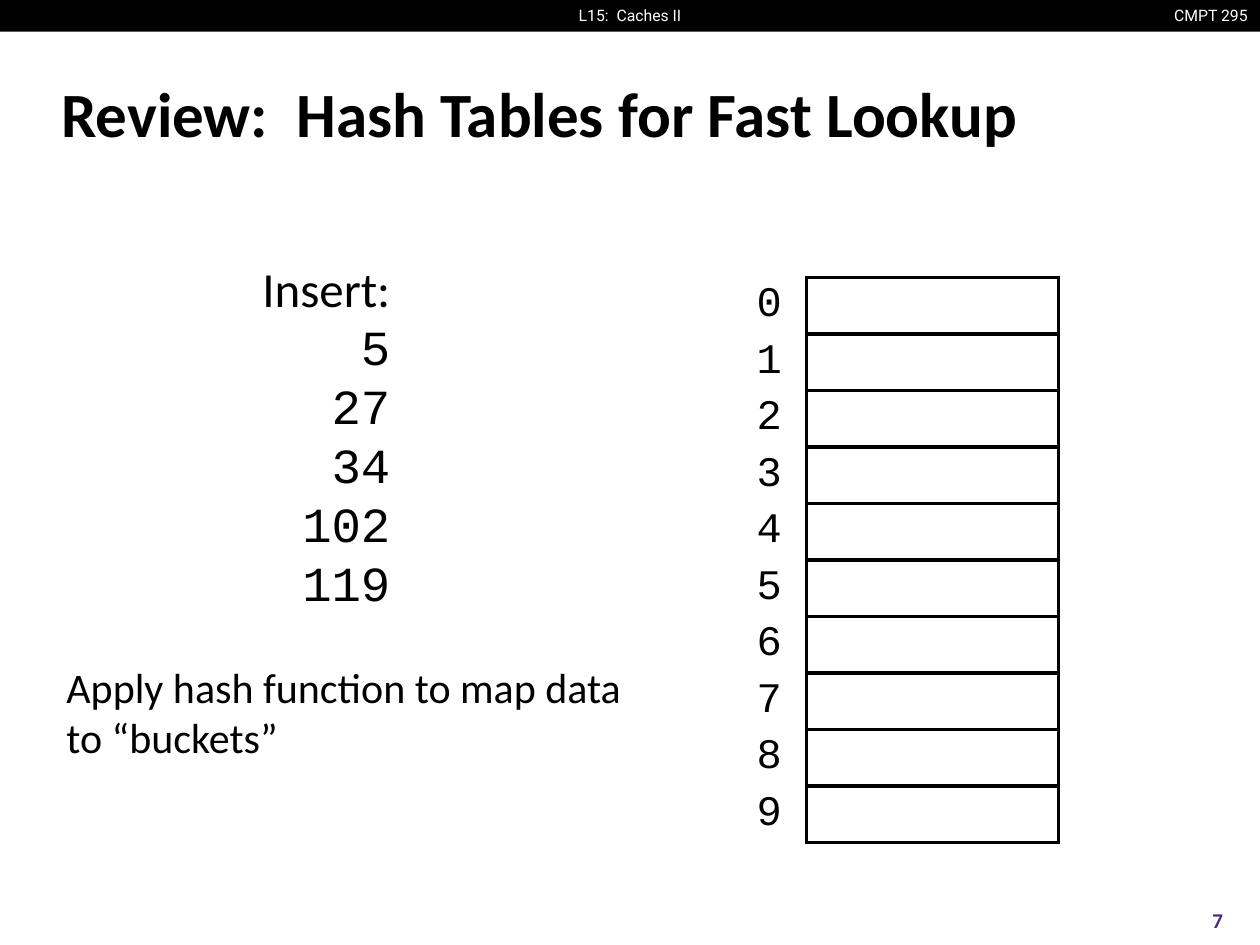
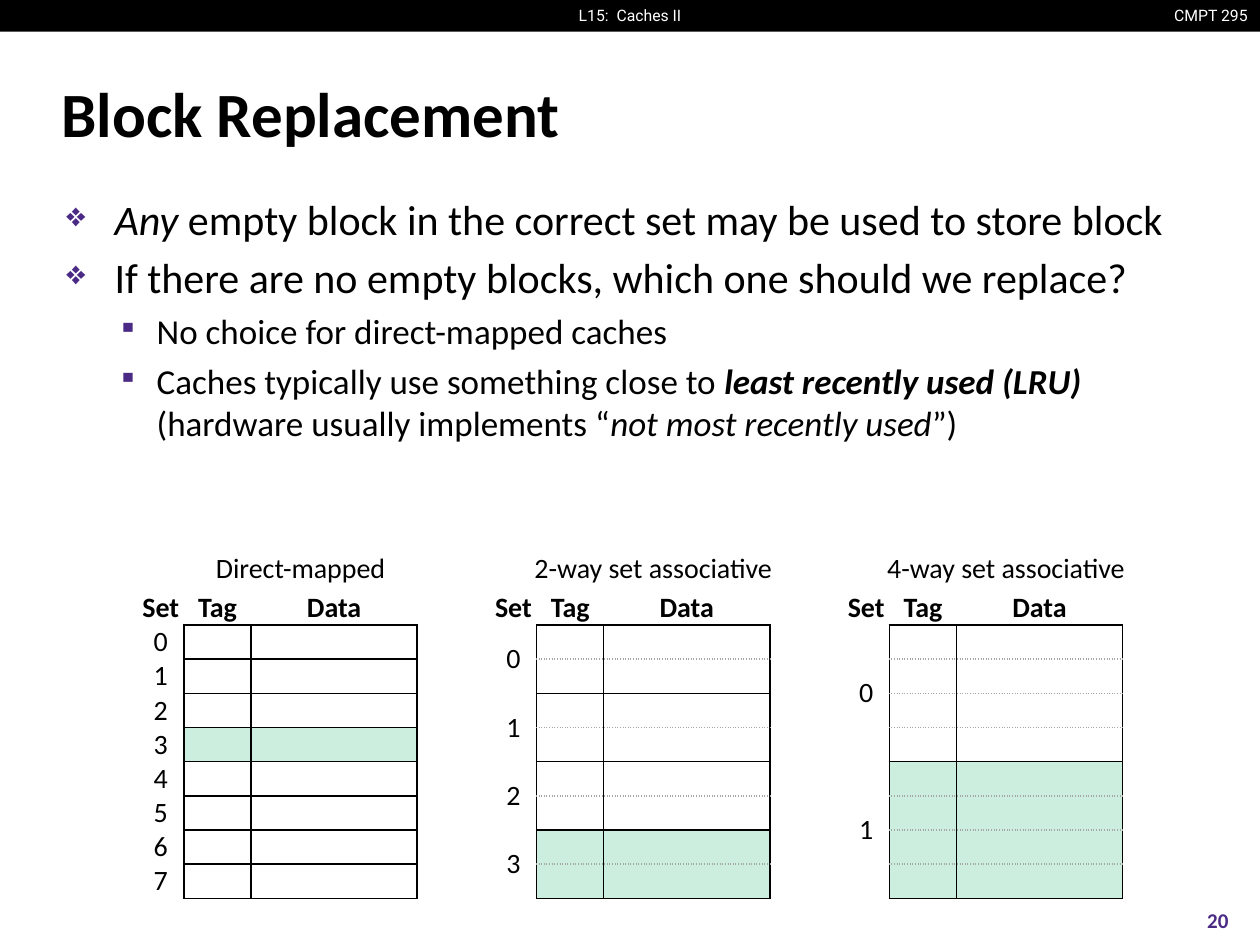
from dataclasses import dataclass

from lxml.etree import SubElement
from pptx import Presentation
from pptx.dml.color import RGBColor
from pptx.enum.shapes import MSO_SHAPE
from pptx.enum.text import MSO_ANCHOR, PP_ALIGN
from pptx.oxml.ns import qn
from pptx.slide import Slide
from pptx.table import Table, _Cell
from pptx.text.text import TextFrame, _Paragraph
from pptx.util import Cm, Pt

BLACK, WHITE, PURPLE, GREEN, GRAY = "000000", "FFFFFF", "4B2A85", "CCEEDF", "A6A6A6"
BODY_FONT, CODE_FONT, BAND_FONT = "Calibri", "Courier New", "Roboto"
SLIDE_WIDTH, SLIDE_HEIGHT, BAND_HEIGHT = 25.4, 19.05, 0.64
NO_STYLE_NO_GRID = "{2D5ABB26-0587-4C30-8999-92F81FD0307C}"

BLOCK_COUNT = 8
CACHE_LEFT, CACHE_TOP, CACHE_STEP, CACHE_ROW = 2.77, 11.91, 7.11, 0.69
CACHE_COLUMNS = (0.94, 1.35, 3.35)
CAPTION_OVERHANG = 0.8


@dataclass(frozen=True)
class Box:
    """Left, top, width and height in centimetres."""
    left: float
    top: float
    width: float
    height: float

    def lengths(self) -> tuple[Cm, Cm, Cm, Cm]:
        return Cm(self.left), Cm(self.top), Cm(self.width), Cm(self.height)


@dataclass(frozen=True)
class Style:
    size: float
    font: str = BODY_FONT
    color: str = BLACK
    bold: bool = False


@dataclass(frozen=True)
class Span:
    text: str
    bold: bool = False
    italic: bool = False


@dataclass(frozen=True)
class Level:
    bullet: str
    bullet_percent: int
    size: float
    margin: float
    hanging: float


@dataclass(frozen=True)
class Edge:
    color: str = BLACK
    width: float = 1
    dash: str = "solid"


@dataclass(frozen=True)
class Cache:
    caption: str
    ways: int
    highlighted_set: int


TOPIC = Level("❖", 80, 24, 0.97, 0.97)
DETAIL = Level("▪", 80, 20, 1.82, 0.79)
SOLID, DOTTED = Edge(), Edge(GRAY, 1, "sysDot")
BUCKET_EDGE = Edge(width=2.25)

REPLACEMENT_POINTS = (
    (TOPIC, (Span("Any", italic=True),
             Span(" empty block in the correct set may be used to store block"))),
    (TOPIC, (Span("If there are no empty blocks, which one should we replace?"),)),
    (DETAIL, (Span("No choice for direct-mapped caches"),)),
    (DETAIL, (Span("Caches typically use something close to "),
              Span("least recently used (LRU)\n", bold=True, italic=True),
              Span("(hardware usually implements “"),
              Span("not most recently used", italic=True),
              Span("”)"))),
)
CACHES = (
    Cache("Direct-mapped", 1, 3),
    Cache("2-way set associative", 2, 3),
    Cache("4-way set associative", 4, 1),
)


def rgb(value: str) -> RGBColor:
    return RGBColor.from_string(value)


def add_run(paragraph: _Paragraph, text: str, style: Style, italic: bool = False) -> None:
    """Add one run; a closing newline becomes a line break."""
    run = paragraph.add_run()
    run.text = text.rstrip("\n")
    font = run.font
    font.name, font.size = style.font, Pt(style.size)
    font.bold, font.italic = style.bold, italic
    font.color.rgb = rgb(style.color)
    if text.endswith("\n"):
        paragraph.add_line_break()


def add_frame(slide: Slide, box: Box, anchor: MSO_ANCHOR = MSO_ANCHOR.TOP,
              wrap: bool = True) -> TextFrame:
    frame = slide.shapes.add_textbox(*box.lengths()).text_frame
    frame.word_wrap = wrap
    frame.vertical_anchor = anchor
    return frame


def add_label(slide: Slide, box: Box, text: str, style: Style,
              align: PP_ALIGN = PP_ALIGN.LEFT, anchor: MSO_ANCHOR = MSO_ANCHOR.TOP,
              wrap: bool = True) -> None:
    paragraph = add_frame(slide, box, anchor, wrap).paragraphs[0]
    paragraph.alignment = align
    add_run(paragraph, text, style)


def add_base_slide(presentation: Presentation, title: str, number: int) -> Slide:
    """Add a slide with the top band, title and page number."""
    slide = presentation.slides.add_slide(presentation.slide_layouts[6])
    band = slide.shapes.add_shape(
        MSO_SHAPE.RECTANGLE, *Box(0, 0, SLIDE_WIDTH, BAND_HEIGHT).lengths())
    band.shadow.inherit = False
    band.fill.solid()
    band.fill.fore_color.rgb = rgb(BLACK)
    band.line.fill.background()
    band_style = Style(9, BAND_FONT, WHITE)
    add_label(slide, Box(23.34, 0, 2.06, BAND_HEIGHT), "CMPT 295", band_style,
              PP_ALIGN.RIGHT, wrap=False)
    add_label(slide, Box(11.36, 0, 2.68, BAND_HEIGHT), "L15:  Caches II", band_style,
              PP_ALIGN.CENTER, wrap=False)
    add_label(slide, Box(0.99, 1.2, 23.34, 2.11), title, Style(36, bold=True),
              anchor=MSO_ANCHOR.MIDDLE)
    add_label(slide, Box(23.7, 18.03, 1.7, 1.02), str(number),
              Style(12, color=PURPLE, bold=True), PP_ALIGN.CENTER, MSO_ANCHOR.MIDDLE)
    return slide


def add_plain_table(slide: Slide, left: float, top: float, columns: tuple[float, ...],
                    row_count: int, row_height: float) -> Table:
    box = Box(left, top, sum(columns), row_count * row_height)
    table = slide.shapes.add_table(row_count, len(columns), *box.lengths()).table
    table.first_row = table.horz_banding = False
    table._tbl.tblPr.find(qn("a:tableStyleId")).text = NO_STYLE_NO_GRID
    for column, width in zip(table.columns, columns):
        column.width = Cm(width)
    for row in table.rows:
        row.height = Cm(row_height)
    return table


def format_cell(cell: _Cell, edges: dict[str, Edge], fill: str | None = None,
                right_margin: float = 0) -> None:
    """Set margins, fill and borders; edges are keyed L, R, T and B."""
    cell.margin_left = cell.margin_top = cell.margin_bottom = 0
    cell.margin_right = Cm(right_margin)
    cell.vertical_anchor = MSO_ANCHOR.MIDDLE
    properties = cell._tc.get_or_add_tcPr()
    for side in "LRTB":
        if side in edges:
            edge = edges[side]
            line = SubElement(properties, qn(f"a:ln{side}"), w=str(Pt(edge.width)))
            solid_fill = SubElement(line, qn("a:solidFill"))
            SubElement(solid_fill, qn("a:srgbClr"), val=edge.color)
            SubElement(line, qn("a:prstDash"), val=edge.dash)
    if fill:
        cell.fill.solid()
        cell.fill.fore_color.rgb = rgb(fill)
    else:
        cell.fill.background()
    # Keeps empty cells from stretching their row.
    cell.text_frame.paragraphs[0]._p.get_or_add_endParaRPr().set("sz", "800")


def write_cell(cell: _Cell, text: str, style: Style, align: PP_ALIGN) -> None:
    paragraph = cell.text_frame.paragraphs[0]
    paragraph.alignment = align
    add_run(paragraph, text, style)


def add_bucket_table(slide: Slide) -> None:
    bucket_count = 10
    table = add_plain_table(slide, 14.99, 5.59, (1.27, 5.08), bucket_count, 1.14)
    for bucket in range(bucket_count):
        index_cell = table.cell(bucket, 0)
        format_cell(index_cell, {"R": BUCKET_EDGE}, right_margin=0.5)
        write_cell(index_cell, str(bucket), Style(24, CODE_FONT), PP_ALIGN.RIGHT)
        format_cell(table.cell(bucket, 1), dict.fromkeys("LRTB", BUCKET_EDGE))


def add_cache_table(slide: Slide, cache: Cache, left: float) -> None:
    caption_box = Box(left + CACHE_COLUMNS[0] - CAPTION_OVERHANG, 10.95,
                      sum(CACHE_COLUMNS[1:]) + 2 * CAPTION_OVERHANG, 0.97)
    add_label(slide, caption_box, cache.caption, Style(16), PP_ALIGN.CENTER,
              MSO_ANCHOR.MIDDLE)
    table = add_plain_table(slide, left, CACHE_TOP, CACHE_COLUMNS, BLOCK_COUNT + 1, CACHE_ROW)
    for column, heading in enumerate(("Set", "Tag", "Data")):
        cell = table.cell(0, column)
        format_cell(cell, {"B": SOLID} if column else {})
        write_cell(cell, heading, Style(16, bold=True), PP_ALIGN.CENTER)
    for block in range(BLOCK_COUNT):
        row = block + 1
        set_number, way = divmod(block, cache.ways)
        format_cell(table.cell(row, 0), {"R": SOLID})
        edges = {"L": SOLID, "R": SOLID,
                 "T": SOLID if way == 0 else DOTTED,
                 "B": SOLID if way == cache.ways - 1 else DOTTED}
        fill = GREEN if set_number == cache.highlighted_set else None
        for column in (1, 2):
            format_cell(table.cell(row, column), edges, fill)
    for set_number in range(BLOCK_COUNT // cache.ways):
        first_row = 1 + set_number * cache.ways
        set_cell = table.cell(first_row, 0)
        if cache.ways > 1:
            set_cell.merge(table.cell(first_row + cache.ways - 1, 0))
        write_cell(set_cell, str(set_number), Style(16), PP_ALIGN.CENTER)


def add_inserted_values(slide: Slide) -> None:
    frame = add_frame(slide, Box(5, 5.08, 3.12, 7.44), wrap=False)
    for index, value in enumerate(("5", "27", "34", "102", "119")):
        paragraph = frame.add_paragraph() if index else frame.paragraphs[0]
        paragraph.alignment = PP_ALIGN.RIGHT
        if index == 0:
            add_run(paragraph, "Insert:\n", Style(28))
        add_run(paragraph, value, Style(28, CODE_FONT))


def add_bullets(slide: Slide) -> None:
    frame = add_frame(slide, Box(1.09, 3.78, 23.24, 13.82))
    for index, (level, spans) in enumerate(REPLACEMENT_POINTS):
        paragraph = frame.add_paragraph() if index else frame.paragraphs[0]
        paragraph.space_before = Pt(4.4)
        properties = paragraph._p.get_or_add_pPr()
        properties.set("marL", str(Cm(level.margin)))
        properties.set("indent", str(-Cm(level.hanging)))
        bullet_color = SubElement(properties, qn("a:buClr"))
        SubElement(bullet_color, qn("a:srgbClr"), val=PURPLE)
        SubElement(properties, qn("a:buSzPct"), val=str(level.bullet_percent * 1000))
        SubElement(properties, qn("a:buChar"), char=level.bullet)
        for span in spans:
            add_run(paragraph, span.text, Style(level.size, bold=span.bold), span.italic)


def add_hash_slide(presentation: Presentation) -> None:
    slide = add_base_slide(presentation, "Review:  Hash Tables for Fast Lookup", 7)
    add_bucket_table(slide)
    add_inserted_values(slide)
    add_label(slide, Box(1.09, 13.21, 12.07, 2.31),
              "Apply hash function to map data to “buckets”", Style(24))


def add_replacement_slide(presentation: Presentation) -> None:
    slide = add_base_slide(presentation, "Block Replacement", 20)
    add_bullets(slide)
    for index, cache in enumerate(CACHES):
        add_cache_table(slide, cache, CACHE_LEFT + index * CACHE_STEP)


def main() -> None:
    presentation = Presentation()
    presentation.slide_width, presentation.slide_height = Cm(SLIDE_WIDTH), Cm(SLIDE_HEIGHT)
    add_hash_slide(presentation)
    add_replacement_slide(presentation)
    presentation.save("out.pptx")


if __name__ == "__main__":
    main()
